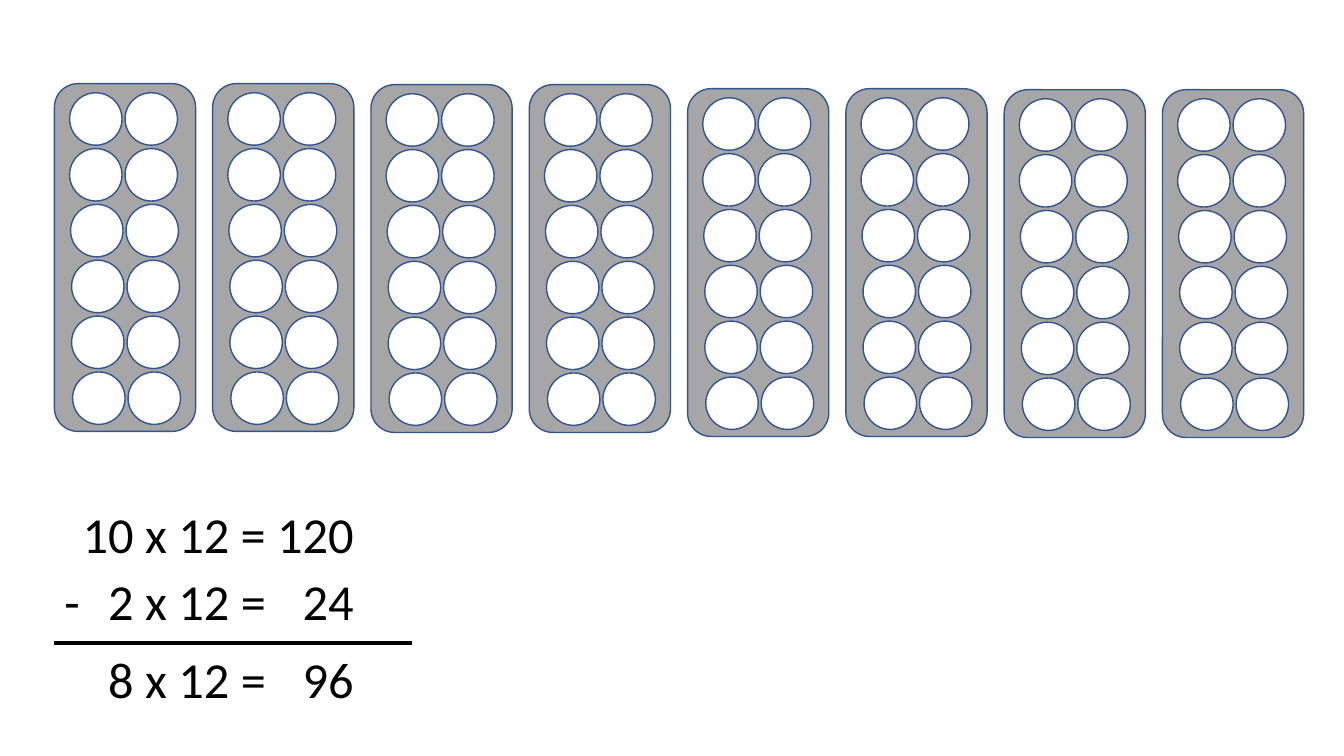
from dataclasses import dataclass

from lxml.etree import SubElement
from pptx import Presentation
from pptx.dml.color import RGBColor
from pptx.enum.shapes import MSO_CONNECTOR, MSO_SHAPE
from pptx.enum.text import MSO_AUTO_SIZE
from pptx.oxml.ns import qn
from pptx.util import Inches, Pt


@dataclass(frozen=True)
class Theme:
    tray: RGBColor = RGBColor(0xA6, 0xA6, 0xA6)
    cup: RGBColor = RGBColor(0xFF, 0xFF, 0xFF)
    outline: RGBColor = RGBColor(0x32, 0x54, 0x91)
    ink: RGBColor = RGBColor(0, 0, 0)
    font: str = "Calibri"
    sum_size: Pt = Pt(36)
    outline_width: Pt = Pt(1)
    rule_width: Pt = Pt(3)


THEME = Theme()

LEFT = 0.54
TRAY_PITCH = 1.57
TRAY_TOPS = [0.83, 0.83, 0.84, 0.84, 0.88, 0.88, 0.89, 0.89]
TRAY_WIDTH, TRAY_HEIGHT = 1.4, 3.45
CUP_SIZE = 0.52
CUP_COLUMN_PITCH = 0.55
CUP_ROW_PITCH = 2.77 / 5
CUP_ROW_INDENTS = [0.15, 0.15, 0.16, 0.17, 0.17, 0.18]

SUM_ROWS = [
    (4.94, "\t10 x 12 =\t120"),
    (5.61, "-\t2 x 12 =\t24"),
    (6.38, "\t8 x 12 =\t96"),
]
SUM_TABS = [2.0, 2.87]


def add_outlined(shapes, kind, left, top, width, height, fill):
    sp = shapes.add_shape(kind, Inches(left), Inches(top), Inches(width), Inches(height))
    sp.shadow.inherit = False
    sp.fill.solid()
    sp.fill.fore_color.rgb = fill
    sp.line.color.rgb = THEME.outline
    sp.line.width = THEME.outline_width


def add_tray(slide, left, top):
    """Add a grouped tray holding six rows of two cups."""
    shapes = slide.shapes.add_group_shape().shapes
    add_outlined(shapes, MSO_SHAPE.ROUNDED_RECTANGLE, left, top,
                 TRAY_WIDTH, TRAY_HEIGHT, THEME.tray)
    for row, indent in enumerate(CUP_ROW_INDENTS):
        for column in range(2):
            add_outlined(shapes, MSO_SHAPE.OVAL,
                         left + indent + column * CUP_COLUMN_PITCH,
                         top + 0.09 + row * CUP_ROW_PITCH,
                         CUP_SIZE, CUP_SIZE, THEME.cup)


def add_right_tabs(p, positions):
    tabs = SubElement(p._p.get_or_add_pPr(), qn("a:tabLst"))
    for position in positions:
        SubElement(tabs, qn("a:tab"), pos=str(Inches(position)), algn="r")


def add_sum_row(slide, top, text):
    """Add one line of the sum, its columns lined up on right tabs."""
    tf = slide.shapes.add_textbox(Inches(LEFT), Inches(top), Inches(3.22), Inches(0.71)).text_frame
    tf.word_wrap = True
    tf.auto_size = MSO_AUTO_SIZE.SHAPE_TO_FIT_TEXT
    p = tf.paragraphs[0]
    p.text = text
    add_right_tabs(p, SUM_TABS)
    p.font.name = THEME.font
    p.font.size = THEME.sum_size
    p.font.color.rgb = THEME.ink


def add_rule(slide, left, right, y):
    line = slide.shapes.add_connector(MSO_CONNECTOR.STRAIGHT, Inches(left), Inches(y),
                                      Inches(right), Inches(y))
    line.line.color.rgb = THEME.ink
    line.line.width = THEME.rule_width
    SubElement(line._element.spPr, qn("a:effectLst"))


def main():
    prs = Presentation()
    prs.slide_width, prs.slide_height = Inches(13.33), Inches(7.5)
    slide = prs.slides.add_slide(prs.slide_layouts[6])
    for i, top in enumerate(TRAY_TOPS):
        add_tray(slide, LEFT + i * TRAY_PITCH, top)
    for top, text in SUM_ROWS:
        add_sum_row(slide, top, text)
    add_rule(slide, LEFT, 4.09, 6.38)
    prs.save("out.pptx")


if __name__ == "__main__":
    main()
